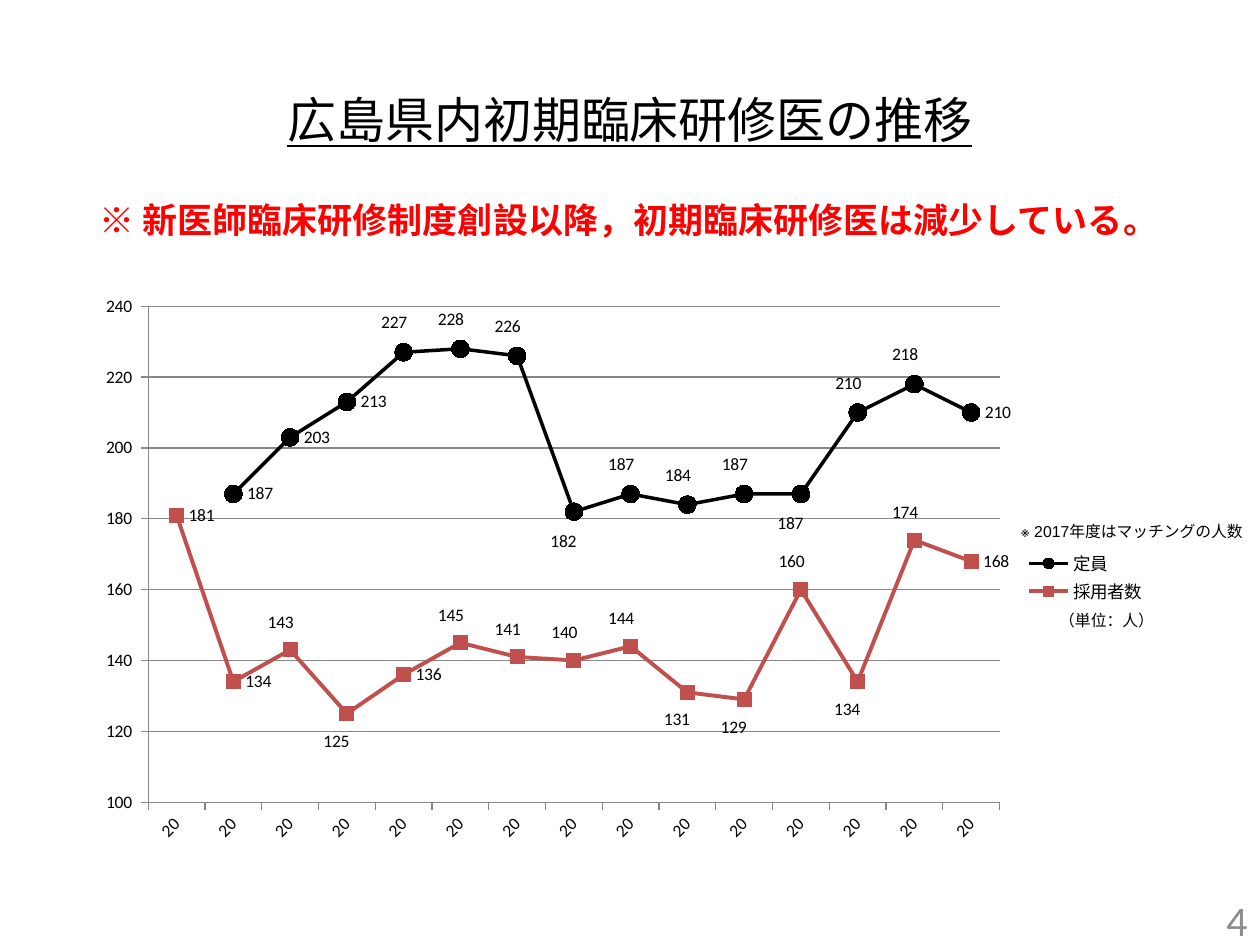
from typing import NamedTuple

from lxml import etree
from pptx import Presentation
from pptx.chart.data import CategoryChartData
from pptx.dml.color import RGBColor
from pptx.enum.chart import (XL_CHART_TYPE, XL_LABEL_POSITION, XL_LEGEND_POSITION,
                             XL_MARKER_STYLE, XL_TICK_MARK)
from pptx.enum.text import MSO_ANCHOR, PP_ALIGN
from pptx.oxml.ns import qn
from pptx.util import Emu, Pt

ABOVE, BELOW, RIGHT = (XL_LABEL_POSITION.ABOVE, XL_LABEL_POSITION.BELOW,
                       XL_LABEL_POSITION.RIGHT)
CENTER, RIGHT_ALIGN = PP_ALIGN.CENTER, PP_ALIGN.RIGHT
MIDDLE = MSO_ANCHOR.MIDDLE
CIRCLE, SQUARE = XL_MARKER_STYLE.CIRCLE, XL_MARKER_STYLE.SQUARE
PX_PER_INCH = 126
GRID = "868686"
NUMBER_FORMAT = "#,##0_ "
LABEL_SHIFTS = {ABOVE: (-0.007, -0.01), BELOW: (-0.008, 0.01)}


class Box(NamedTuple):
    left: int
    top: int
    width: int
    height: int


class Label(NamedTuple):
    box: Box
    text: str
    size: int
    font: str
    color: str
    align: PP_ALIGN
    bold: bool = False


class Line(NamedTuple):
    name: str
    values: list
    color: str
    width: float
    marker: XL_MARKER_STYLE
    marker_size: int
    above: tuple
    below: tuple


YEARS = [f"{year}年度" for year in range(2003, 2018)]
LINES = [
    Line("定員", [None, 187, 203, 213, 227, 228, 226, 182, 187, 184, 187, 187, 210, 218, 210],
         "000000", 2, CIRCLE, 10, (4, 5, 6, 8, 9, 10, 12, 13), (7, 11)),
    Line("採用者数", [181, 134, 143, 125, 136, 145, 141, 140, 144, 131, 129, 160, 134, 174, 168],
         "C0504D", 2.25, SQUARE, 8, (2, 5, 6, 7, 8, 11, 13), (3, 9, 10, 12)),
]
LABELS = [
    Label(Box(966, 895, 294, 50), "4", 24, "Calibri", "8C8C8C", RIGHT_ALIGN),
    Label(Box(0, 175, 1258, 90), "※ 新医師臨床研修制度創設以降，初期臨床研修医は減少している。",
          20, "Noto Sans CJK JP", "FF0000", CENTER, True),
    Label(Box(1037, 601, 139, 39), "（単位：人）", 9, "Arial", "000000", CENTER),
    Label(Box(978, 512, 277, 39), "※ 2017年度はマッチングの人数", 9, "Arial", "000000", RIGHT_ALIGN),
]


def px(n: int) -> Emu:
    return Emu(round(n * 914400 / PX_PER_INCH))


def rgb(value: str) -> RGBColor:
    return RGBColor.from_string(value)


def set_layout(parent, index: int, **values) -> None:
    """Give a chart element a manual layout, as child number index."""
    for old in parent.findall(qn("c:layout")):
        parent.remove(old)
    layout = etree.Element(qn("c:layout"))
    manual = etree.SubElement(layout, qn("c:manualLayout"))
    for tag, value in values.items():
        etree.SubElement(manual, qn(f"c:{tag}")).set("val", str(value))
    parent.insert(index, layout)


def format_text(tf, label: Label) -> None:
    tf.word_wrap = True
    tf.vertical_anchor = MIDDLE
    p = tf.paragraphs[0]
    p.text = label.text
    p.alignment = label.align
    p.font.size = Pt(label.size)
    p.font.name = label.font
    p.font.bold = label.bold
    p.font.color.rgb = rgb(label.color)


def add_label(s, label: Label) -> None:
    format_text(s.shapes.add_textbox(*map(px, label.box)).text_frame, label)


def format_title(title) -> None:
    box = Box(15, 64, 1230, 110)
    title.left, title.top, title.width, title.height = map(px, box)
    title.fill.solid()
    title.fill.fore_color.rgb = rgb("FFFFFF")
    format_text(title.text_frame, Label(box, "広島県内初期臨床研修医の推移", 28, "Calibri",
                                        "000000", CENTER))
    title.text_frame.paragraphs[0].font.underline = True


def format_series(series, line: Line) -> None:
    series.smooth = False
    series.format.line.color.rgb = rgb(line.color)
    series.format.line.width = Pt(line.width)
    marker = series.marker
    marker.style, marker.size = line.marker, line.marker_size
    marker.format.fill.solid()
    marker.format.fill.fore_color.rgb = rgb(line.color)
    marker.format.line.color.rgb = rgb(line.color)

    labels = series.data_labels
    labels.show_value = True
    labels.position = RIGHT
    labels.number_format, labels.number_format_is_linked = NUMBER_FORMAT, False
    for position, points in ((ABOVE, line.above), (BELOW, line.below)):
        x, y = LABEL_SHIFTS[position]
        for i in points:
            label = series.points[i].data_label
            label.position = position
            node = labels._element.xpath(f"c:dLbl[c:idx/@val='{i}']")[0]
            set_layout(node, 1, x=x, y=y)


def format_axes(chart) -> None:
    for axis in (chart.category_axis, chart.value_axis):
        axis.major_tick_mark = XL_TICK_MARK.OUTSIDE
        axis.minor_tick_mark = XL_TICK_MARK.NONE
        axis.format.line.color.rgb = rgb(GRID)
    axis = chart.value_axis
    axis.minimum_scale, axis.maximum_scale, axis.major_unit = 100, 240, 20
    axis.has_major_gridlines = True
    axis.major_gridlines.format.line.color.rgb = rgb(GRID)
    axis.tick_labels.number_format = NUMBER_FORMAT
    axis.tick_labels.number_format_is_linked = False


def add_line_chart(s, box: Box) -> None:
    data = CategoryChartData()
    data.categories = YEARS
    for line in LINES:
        data.add_series(line.name, line.values)
    chart = s.shapes.add_chart(XL_CHART_TYPE.LINE_MARKERS, *map(px, box), data).chart
    chart.has_title = False
    chart.font.size, chart.font.name = Pt(10), "Calibri"
    chart.font.color.rgb = rgb("000000")
    chart.plots[0].vary_by_categories = False
    for series, line in zip(chart.plots[0].series, LINES):
        format_series(series, line)
    format_axes(chart)

    chart.has_legend = True
    chart.legend.position = XL_LEGEND_POSITION.RIGHT
    chart.legend.include_in_layout = False
    set_layout(chart.legend._element, 1, xMode="edge", yMode="edge",
               x=0.875, y=0.45, w=0.12, h=0.1)
    plot_area = chart._chartSpace.find(f".//{qn('c:plotArea')}")
    set_layout(plot_area, 0, layoutTarget="inner", xMode="edge", yMode="edge",
               x=0.06, y=0.038, w=0.795, h=0.845)


def main() -> None:
    prs = Presentation()
    prs.slide_width, prs.slide_height = px(1260), px(945)
    s = prs.slides.add_slide(prs.slide_layouts[5])
    add_line_chart(s, Box(84, 284, 1071, 587))
    for label in LABELS:
        add_label(s, label)
    format_title(s.shapes.title)
    prs.save("out.pptx")


if __name__ == "__main__":
    main()
